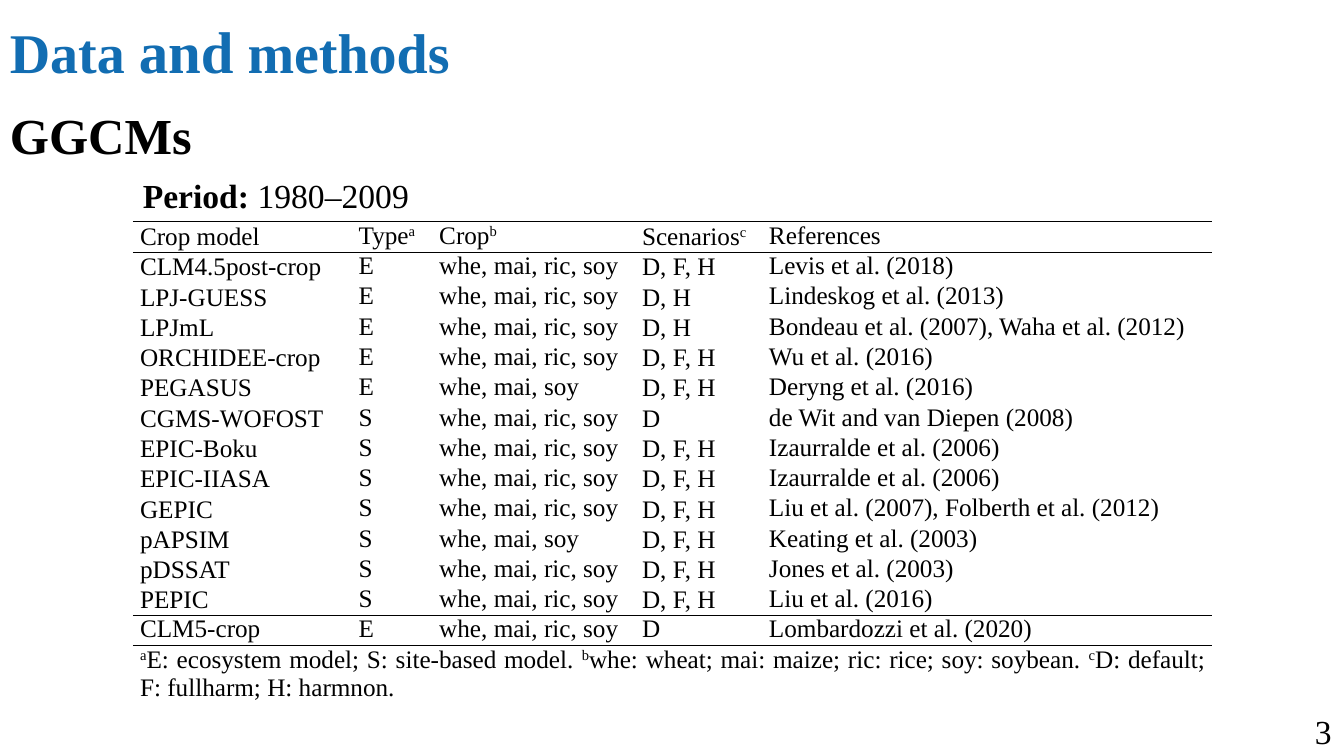
import pptx
import pptx.util
import pptx.dml.color
import pptx.enum.shapes
import pptx.enum.text
import pptx.oxml
import pptx.oxml.ns
from dataclasses import dataclass

Cm, Pt = pptx.util.Cm, pptx.util.Pt
Align = pptx.enum.text.PP_ALIGN
Anchor = pptx.enum.text.MSO_ANCHOR


@dataclass
class Theme:
    font: str = "Times New Roman"
    ink: str = "000000"
    blue: str = "126DB2"
    white: str = "FFFFFF"
    title: int = 40
    large: int = 42
    head: int = 36
    note: int = 24
    cell: int = 18


theme = Theme()


def write(para, parts, size, color=theme.ink):
    """Add the parts as runs under one paragraph font."""
    font = para.font
    font.name, font.size = theme.font, Pt(size)
    font.color.rgb = pptx.dml.color.RGBColor.from_string(color)
    runs = []
    for part in parts:
        run = para.add_run()
        run.text = part
        runs.append(run)
    return runs


def rule(cell, sides):
    """Draw black lines on the named sides and none on the others."""
    props = cell._tc.get_or_add_tcPr()
    for side in "LRTB":
        if side in sides:
            fill = f'<a:solidFill><a:srgbClr val="{theme.ink}"/></a:solidFill>'
        else:
            fill = "<a:noFill/>"
        props.append(pptx.oxml.parse_xml(
            f'<a:ln{side} {pptx.oxml.ns.nsdecls("a")} w="12700">{fill}</a:ln{side}>'))


deck = pptx.Presentation()
deck.slide_width, deck.slide_height = Cm(33.87), Cm(19.05)
slide = deck.slides.add_slide(deck.slide_layouts[6])

# Title bar
bar = slide.shapes.add_shape(pptx.enum.shapes.MSO_SHAPE.RECTANGLE,
                             0, Cm(0.23), Cm(33.87), Cm(2.06))
bar.shadow.inherit = False
bar.fill.solid()
bar.fill.fore_color.rgb = pptx.dml.color.RGBColor.from_string(theme.white)
bar.line.color.rgb = pptx.dml.color.RGBColor.from_string(theme.white)
bar.line.width = Pt(0.75)
frame = bar.text_frame
frame.word_wrap = True
frame.vertical_anchor = Anchor.MIDDLE
para = frame.paragraphs[0]
para.alignment = Align.LEFT
para.font.bold = True
runs = write(para, ["Data ", "and", " methods"], theme.title, theme.blue)
runs[1].font.size = Pt(theme.large)

# Heading, period and page number; the count tells how many parts are bold
labels = [
    (0, 2.49, 24.92, 1.8, ["GGCMs"], theme.head, 1),
    (3.35, 4.29, 7.32, 1.27, ["Period: ", "1980–2009"], theme.note, 1),
    (32.89, 17.78, 0.99, 1.27, ["3"], theme.note, 0),
]
for left, top, width, height, parts, size, bold in labels:
    box = slide.shapes.add_textbox(Cm(left), Cm(top), Cm(width), Cm(height))
    box.text_frame.word_wrap = True
    runs = write(box.text_frame.paragraphs[0], parts, size)
    for run in runs[:bold]:
        run.font.bold = True

# Table content; text between carets is raised
crops = "whe, mai, ric, soy"
few = "whe, mai, soy"
rows = [
    ("Crop model", "Type^a", "Crop^b", "Scenarios^c", "References"),
    ("CLM4.5post-crop", "E", crops, "D, F, H", "Levis et al. (2018)"),
    ("LPJ-GUESS", "E", crops, "D, H", "Lindeskog et al. (2013)"),
    ("LPJmL", "E", crops, "D, H", "Bondeau et al. (2007), Waha et al. (2012)"),
    ("ORCHIDEE-crop", "E", crops, "D, F, H", "Wu et al. (2016)"),
    ("PEGASUS", "E", few, "D, F, H", "Deryng et al. (2016)"),
    ("CGMS-WOFOST", "S", crops, "D", "de Wit and van Diepen (2008)"),
    ("EPIC-Boku", "S", crops, "D, F, H", "Izaurralde et al. (2006)"),
    ("EPIC-IIASA", "S", crops, "D, F, H", "Izaurralde et al. (2006)"),
    ("GEPIC", "S", crops, "D, F, H", "Liu et al. (2007), Folberth et al. (2012)"),
    ("pAPSIM", "S", few, "D, F, H", "Keating et al. (2003)"),
    ("pDSSAT", "S", crops, "D, F, H", "Jones et al. (2003)"),
    ("PEPIC", "S", crops, "D, F, H", "Liu et al. (2016)"),
    ("CLM5-crop", "E", crops, "D", "Lombardozzi et al. (2020)"),
    ("^a^E: ecosystem model; S: site-based model. "
     "^b^whe: wheat; mai: maize; ric: rice; soy: soybean. "
     "^c^D: default; F: fullharm; H: harmnon.", "", "", "", ""),
]
widths = [5.51, 2.03, 5.11, 3.2, 11.35]
high = 0.76
last = len(rows) - 1
sides = {0: "TB", 1: "T", last - 2: "B", last - 1: "TB", last: "T"}

# Table
table = slide.shapes.add_table(len(rows), len(widths), Cm(3.35), Cm(5.59),
                               Cm(sum(widths)), Cm(high * (last + 2))).table
table.first_row = table.horz_banding = False
for col, width in zip(table.columns, widths):
    col.width = Cm(width)
for row in table.rows:
    row.height = Cm(high)
table.rows[last].height = Cm(2 * high)
table.cell(last, 0).merge(table.cell(last, len(widths) - 1))

for r, row in enumerate(rows):
    for c, text in enumerate(row):
        cell = table.cell(r, c)
        cell.margin_left = cell.margin_right = Cm(0.18)
        cell.margin_top = cell.margin_bottom = 0
        if c in (0, 3) and r < last - 1:
            cell.vertical_anchor = Anchor.MIDDLE
        rule(cell, sides.get(r, ""))
        cell.fill.background()
        para = cell.text_frame.paragraphs[0]
        para.alignment = Align.JUSTIFY
        parts = text.split("^")
        raised = parts[1::2]
        runs = write(para, [part for part in parts if part], theme.cell)
        for run in runs:
            if run.text in raised:
                run.font._element.set("baseline", "30000")

deck.save("out.pptx")
